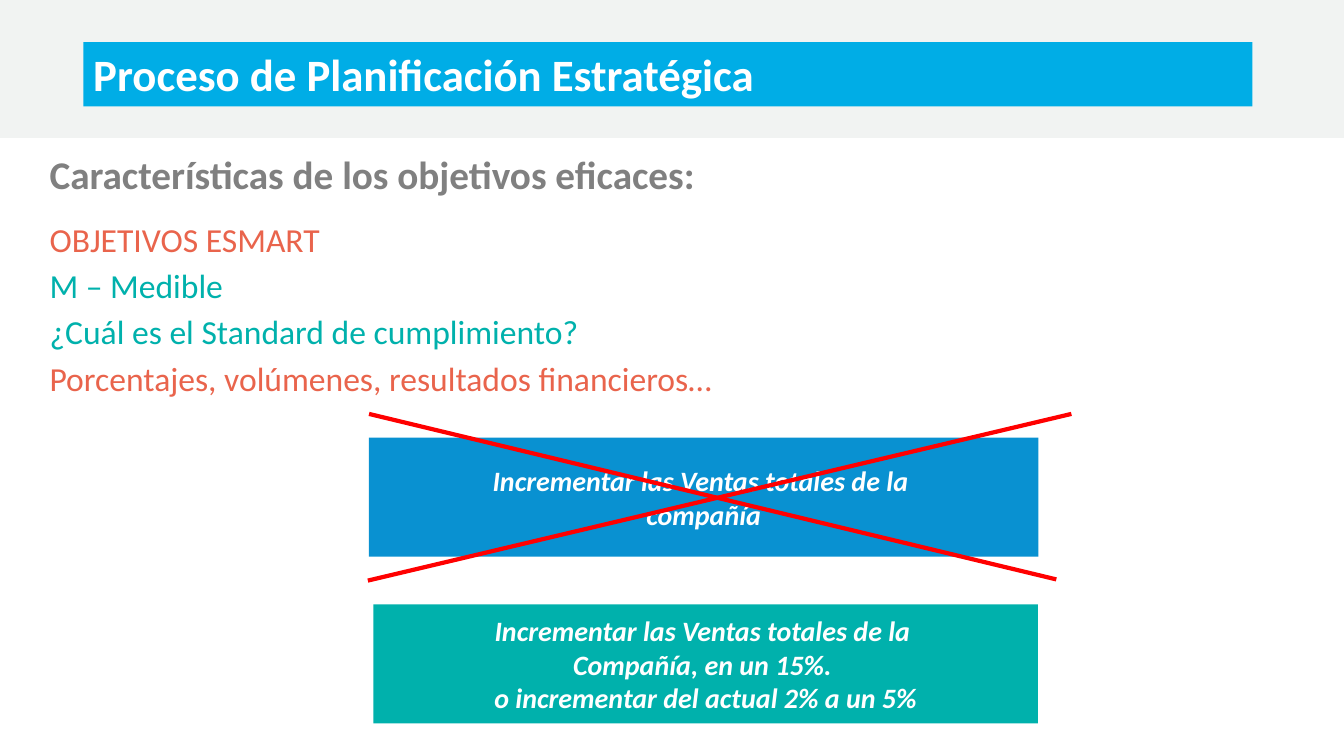
from lxml import etree
from pptx import Presentation
from pptx.dml.color import RGBColor
from pptx.enum import shapes, text
from pptx.oxml.ns import qn
from pptx.util import Cm, Pt

WHITE = RGBColor(0xFF, 0xFF, 0xFF)
PALE = RGBColor(0xF1, 0xF3, 0xF2)
SKY = RGBColor(0x00, 0xAD, 0xE6)
BLUE = RGBColor(0x09, 0x91, 0xD1)
TEAL = RGBColor(0x00, 0xB1, 0xAC)
CORAL = RGBColor(0xE9, 0x64, 0x4C)
GREY = RGBColor(0x80, 0x80, 0x80)
RED = RGBColor(0xFF, 0x00, 0x00)

deck = Presentation()
deck.slide_width, deck.slide_height = Cm(33.87), Cm(19.05)
slide = deck.slides.add_slide(deck.slide_layouts[6])


def add_block(left, top, width, height, color):
    block = slide.shapes.add_shape(
        shapes.MSO_SHAPE.RECTANGLE, Cm(left), Cm(top), Cm(width), Cm(height))
    block.shadow.inherit = False
    block.fill.solid()
    block.fill.fore_color.rgb = color
    block.line.fill.background()
    return block


def write_lines(frame, lines, size, bold=False, italic=False,
                align=text.PP_ALIGN.LEFT, gap=0):
    for number, (line, color) in enumerate(lines):
        paragraph = frame.add_paragraph() if number else frame.paragraphs[0]
        paragraph.text = line
        paragraph.alignment = align
        if number and gap:
            paragraph.space_before = Pt(gap)
        font = paragraph.font
        font.name, font.size = "Calibri", Pt(size)
        font.bold, font.italic = bold, italic
        font.color.rgb = color


header_band = add_block(0, 0, 33.87, 3.45, PALE)
header_band.line.color.rgb = PALE
header_band.line.width = Pt(1)

criteria = slide.shapes.add_textbox(Cm(1), Cm(5.38), Cm(30.58), Cm(6)).text_frame
criteria.word_wrap = True
write_lines(criteria, [
    ("OBJETIVOS ESMART", CORAL),
    ("M – Medible", TEAL),
    ("¿Cuál es el Standard de cumplimiento?", TEAL),
    ("Porcentajes, volúmenes, resultados financieros…", CORAL),
], 24, gap=4.3)

examples = [
    (9.3, 11.03, 16.87, BLUE,
     ["Incrementar las Ventas totales de la ", "compañía"]),
    (9.41, 15.23, 16.75, TEAL,
     ["Incrementar las Ventas totales de la ", "Compañía, en un 15%. ",
      "o incrementar del actual 2% a un 5%"]),
]
for left, top, width, color, lines in examples:
    example = add_block(left, top, width, 3, color).text_frame
    example.word_wrap = False
    example.vertical_anchor = text.MSO_ANCHOR.MIDDLE
    write_lines(example, [(line, WHITE) for line in lines], 20,
                bold=True, italic=True, align=text.PP_ALIGN.CENTER)

for start_x, start_y, end_x, end_y in [(9.27, 14.63, 27, 10.43), (9.3, 10.43, 26.62, 14.6)]:
    stroke = slide.shapes.add_connector(
        shapes.MSO_CONNECTOR.STRAIGHT, Cm(start_x), Cm(start_y), Cm(end_x), Cm(end_y))
    stroke.line.color.rgb = RED
    stroke.line.width = Pt(3)
    etree.SubElement(stroke._element.spPr, qn("a:effectLst"))

subtitle = slide.shapes.add_textbox(Cm(1), Cm(3.45), Cm(31.67), Cm(1.93)).text_frame
subtitle.word_wrap = True
subtitle.vertical_anchor = text.MSO_ANCHOR.MIDDLE
write_lines(subtitle, [("Características de los objetivos eficaces:", GREY)], 28, bold=True)
subtitle.paragraphs[0].line_spacing = Pt(32)

title = add_block(2.1, 1.06, 29.46, 1.62, SKY).text_frame
title.word_wrap = True
title.vertical_anchor = text.MSO_ANCHOR.TOP
write_lines(title, [("Proceso de Planificación Estratégica", WHITE)], 32,
            bold=True, align=text.PP_ALIGN.JUSTIFY)

deck.save("out.pptx")
